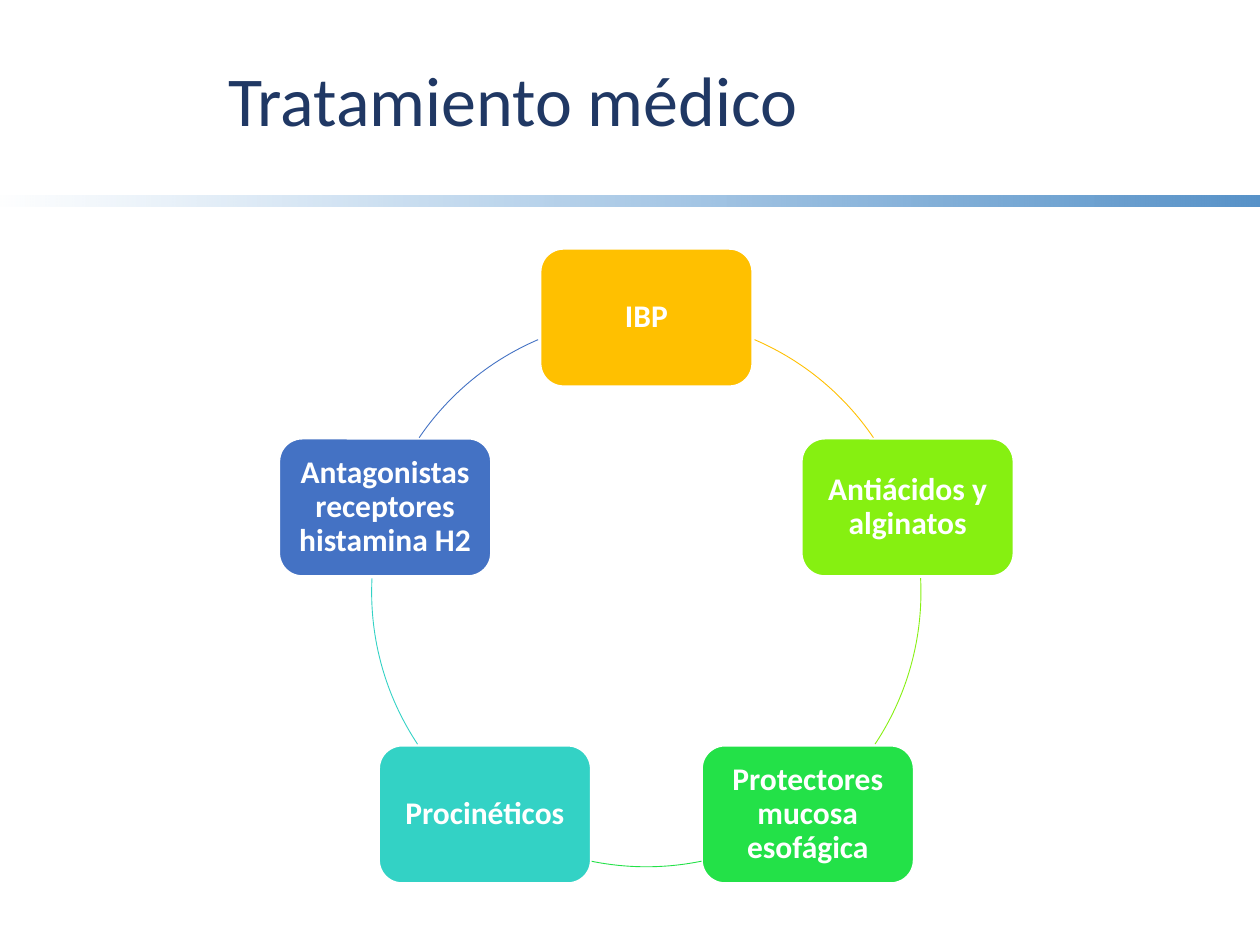
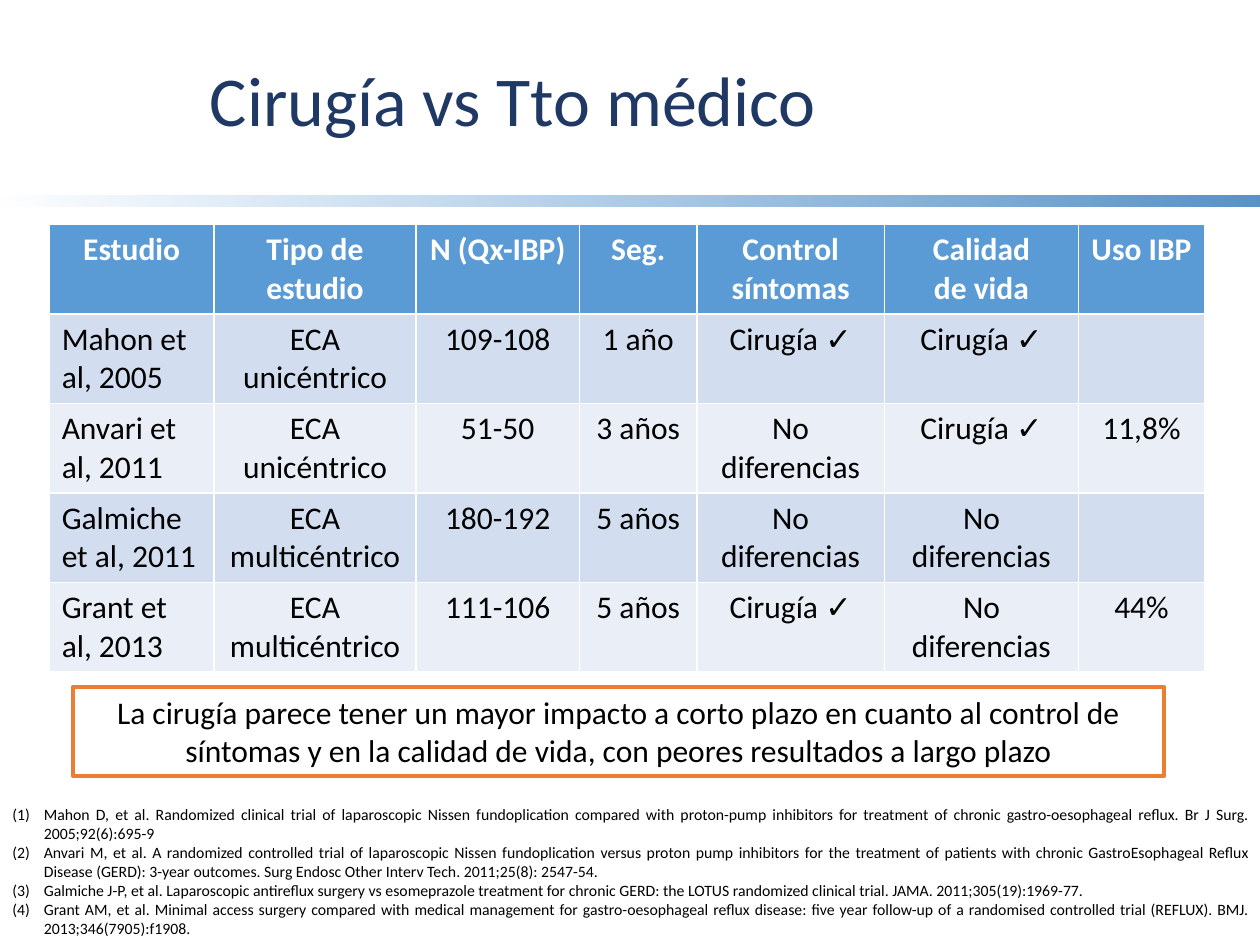
from math import cos, radians, sin

from lxml.etree import SubElement
from pptx import Presentation
from pptx.dml.color import RGBColor
from pptx.enum.shapes import MSO_SHAPE as Shape
from pptx.enum.text import MSO_ANCHOR as Anchor, PP_ALIGN as Align
from pptx.oxml.ns import qn
from pptx.util import Inches, Pt

FONT = "Calibri"
WHITE = RGBColor(0xFF, 0xFF, 0xFF)
BLACK = RGBColor(0x00, 0x00, 0x00)
NAVY = RGBColor(0x20, 0x38, 0x64)
BLUE = RGBColor(0x5B, 0x9B, 0xD5)
BAND_END = RGBColor(0x55, 0x91, 0xC8)
ROW_DARK = RGBColor(0xD2, 0xDE, 0xEF)
ROW_LIGHT = RGBColor(0xEA, 0xEF, 0xF7)
ORANGE = RGBColor(0xED, 0x7D, 0x31)
AMBER = RGBColor(0xFF, 0xC0, 0x00)
LIME = RGBColor(0x86, 0xF0, 0x11)
GREEN = RGBColor(0x23, 0xE1, 0x48)
TURQUOISE = RGBColor(0x33, 0xD2, 0xC5)
ROYAL = RGBColor(0x44, 0x72, 0xC4)

# Treatments clockwise from the top, each with the arc that follows (degrees)
TREATMENTS = [
    ("IBP", AMBER, 293.2, 325.8),
    ("Antiácidos y alginatos", LIME, 357.1, 33.6),
    ("Protectores mucosa esofágica", GREEN, 78.4, 101.6),
    ("Procinéticos", TURQUOISE, 146.4, 182.9),
    ("Antagonistas receptores histamina H2", ROYAL, 214.2, 246.8),
]

STUDY_WIDTHS = [1.31, 1.6, 1.3, 0.93, 1.49, 1.54, 1]
STUDIES = [
    ["Estudio", "Tipo de estudio", "N (Qx-IBP)", "Seg.", "Control síntomas",
     "Calidad\nde vida", "Uso IBP"],
    ["Mahon et al, 2005", "ECA unicéntrico", "109-108", "1 año", "Cirugía ✓",
     "Cirugía ✓", ""],
    ["Anvari et al, 2011", "ECA unicéntrico", "51-50", "3 años", "No diferencias",
     "Cirugía ✓", "11,8%"],
    ["Galmiche et al, 2011", "ECA multicéntrico", "180-192", "5 años",
     "No diferencias", "No diferencias", ""],
    ["Grant et al, 2013", "ECA multicéntrico", "111-106", "5 años", "Cirugía ✓",
     "No diferencias", "44%"],
]

CONCLUSION = (
    "La cirugía parece tener un mayor impacto a corto plazo en cuanto al control de "
    "síntomas y en la calidad de vida, con peores resultados a largo plazo"
)

REFERENCES = [
    "Mahon D, et al. Randomized clinical trial of laparoscopic Nissen fundoplication "
    "compared with proton-pump inhibitors for treatment of chronic gastro-oesophageal "
    "reflux. Br J Surg. 2005;92(6):695-9",
    "Anvari M, et al. A randomized controlled trial of laparoscopic Nissen fundoplication "
    "versus proton pump inhibitors for the treatment of patients with chronic "
    "GastroEsophageal Reflux Disease (GERD): 3-year outcomes. Surg Endosc Other Interv "
    "Tech. 2011;25(8): 2547-54.",
    "Galmiche J-P, et al. Laparoscopic antireflux surgery vs esomeprazole treatment for "
    "chronic GERD: the LOTUS randomized clinical trial. JAMA. 2011;305(19):1969-77.",
    "Grant AM, et al. Minimal access surgery compared with medical management for "
    "gastro-oesophageal reflux disease: five year follow-up of a randomised controlled "
    "trial (REFLUX). BMJ. 2013;346(7905):f1908.",
]


def box(left, top, width, height):
    return [Inches(value) for value in (left, top, width, height)]


class Deck:
    def __init__(self):
        self.prs = Presentation()
        self.prs.slide_width, self.prs.slide_height = Inches(10), Inches(7.5)
        self.slide = None

    def new_slide(self, heading):
        self.slide = self.prs.slides.add_slide(self.prs.slide_layouts[5])
        self.band()
        title = self.slide.shapes.title
        title.left, title.top, title.width, title.height = box(0.35, 0.1, 7.44, 1.45)
        title.text_frame.vertical_anchor = Anchor.MIDDLE
        self.add_text(title.text_frame, [heading], 40, NAVY, spacing=0.9)

    def add_text(self, frame, lines, size, color, bold=False, align=Align.CENTER,
                 spacing=None, numbered=False):
        frame.word_wrap = True
        for index, line in enumerate(lines):
            paragraph = frame.add_paragraph() if index else frame.paragraphs[0]
            paragraph.alignment = align
            if spacing:
                paragraph.line_spacing = spacing
            if numbered:
                self.number(paragraph)
            run = paragraph.add_run()
            run.text = line
            run.font.name, run.font.size, run.font.bold = FONT, Pt(size), bold
            run.font.color.rgb = color

    def number(self, paragraph):
        props = paragraph._p.get_or_add_pPr()
        props.set("marL", str(Inches(0.25)))
        props.set("indent", str(-Inches(0.25)))
        SubElement(props, qn("a:buFont"), typeface="+mj-lt")
        SubElement(props, qn("a:buAutoNum"), type="arabicParenBoth")

    def shape(self, kind, place, fill=None, line=None, weight=1):
        shape = self.slide.shapes.add_shape(kind, *box(*place))
        shape.shadow.inherit = False
        if fill is None:
            shape.fill.background()
        else:
            shape.fill.solid()
            shape.fill.fore_color.rgb = fill
        if line is None:
            shape.line.fill.background()
        else:
            shape.line.color.rgb = line
            shape.line.width = Pt(weight)
        return shape

    def band(self):
        band = self.shape(Shape.RECTANGLE, (-0.06, 1.55, 10.2, 0.09))
        band.fill.gradient()
        band.fill.gradient_angle = 0
        for stop, color in zip(band.fill.gradient_stops, (BLUE, BAND_END)):
            stop.color.rgb = color
        # Fade in from a fully transparent start
        start = band.element.spPr.find(".//" + qn("a:srgbClr"))
        SubElement(start, qn("a:alpha"), val="0")

    def node(self, place, label, color):
        node = self.shape(Shape.ROUNDED_RECTANGLE, place, color, WHITE)
        frame = node.text_frame
        frame.margin_left = frame.margin_right = Inches(0.07)
        frame.margin_top = frame.margin_bottom = Inches(0.07)
        frame.vertical_anchor = Anchor.MIDDLE
        self.add_text(frame, [label], 18, WHITE, bold=True, spacing=0.9)

    def arc(self, place, start, end, color):
        arc = self.shape(Shape.ARC, place, line=color, weight=0.5)
        # Angles are held in 1/60000 degree, adjustments in units of 100000
        arc.adjustments[0], arc.adjustments[1] = start * 0.6, end * 0.6

    def table(self, place, widths, rows):
        table = self.slide.shapes.add_table(len(rows), len(widths), *box(*place)).table
        for column, width in zip(table.columns, widths):
            column.width = Inches(width)
        for r, row in enumerate(rows):
            header = r == 0
            for c, text in enumerate(row):
                cell = table.cell(r, c)
                cell.fill.solid()
                cell.fill.fore_color.rgb = (
                    BLUE if header else ROW_DARK if r % 2 else ROW_LIGHT)
                align = Align.CENTER if header or c else Align.LEFT
                self.add_text(cell.text_frame, text.split("\n"), 18,
                              WHITE if header else BLACK, header, align)

    def callout(self, place, text):
        callout = self.shape(Shape.RECTANGLE, place, WHITE, ORANGE, 2.25)
        callout.text_frame.vertical_anchor = Anchor.TOP
        self.add_text(callout.text_frame, [text], 18, BLACK)

    def references(self, place, entries):
        notes = self.slide.shapes.add_textbox(*box(*place))
        self.add_text(notes.text_frame, entries, 9, BLACK, align=Align.JUSTIFY,
                      numbered=True)


def treatment_slide(deck):
    deck.new_slide("Tratamiento médico")
    center_x, center_y, radius = 5.13, 4.7, 2.18
    width, height = 1.68, 1.09
    ring = (center_x - radius, center_y - radius, 2 * radius, 2 * radius)
    step = 360 / len(TREATMENTS)
    for index, (label, color, start, end) in enumerate(TREATMENTS):
        angle = radians(index * step - 90)
        left = center_x + radius * cos(angle) - width / 2
        top = center_y + radius * sin(angle) - height / 2
        deck.node((left, top, width, height), label, color)
        deck.arc(ring, start, end, color)


def surgery_slide(deck):
    deck.new_slide("Cirugía vs Tto médico")
    deck.table((0.39, 1.78, 9.16, 3.5), STUDY_WIDTHS, STUDIES)
    deck.callout((0.58, 5.45, 8.66, 0.71), CONCLUSION)
    deck.references((0, 6.34, 10, 1.16), REFERENCES)


def main():
    deck = Deck()
    treatment_slide(deck)
    surgery_slide(deck)
    deck.prs.save("out.pptx")


if __name__ == "__main__":
    main()
